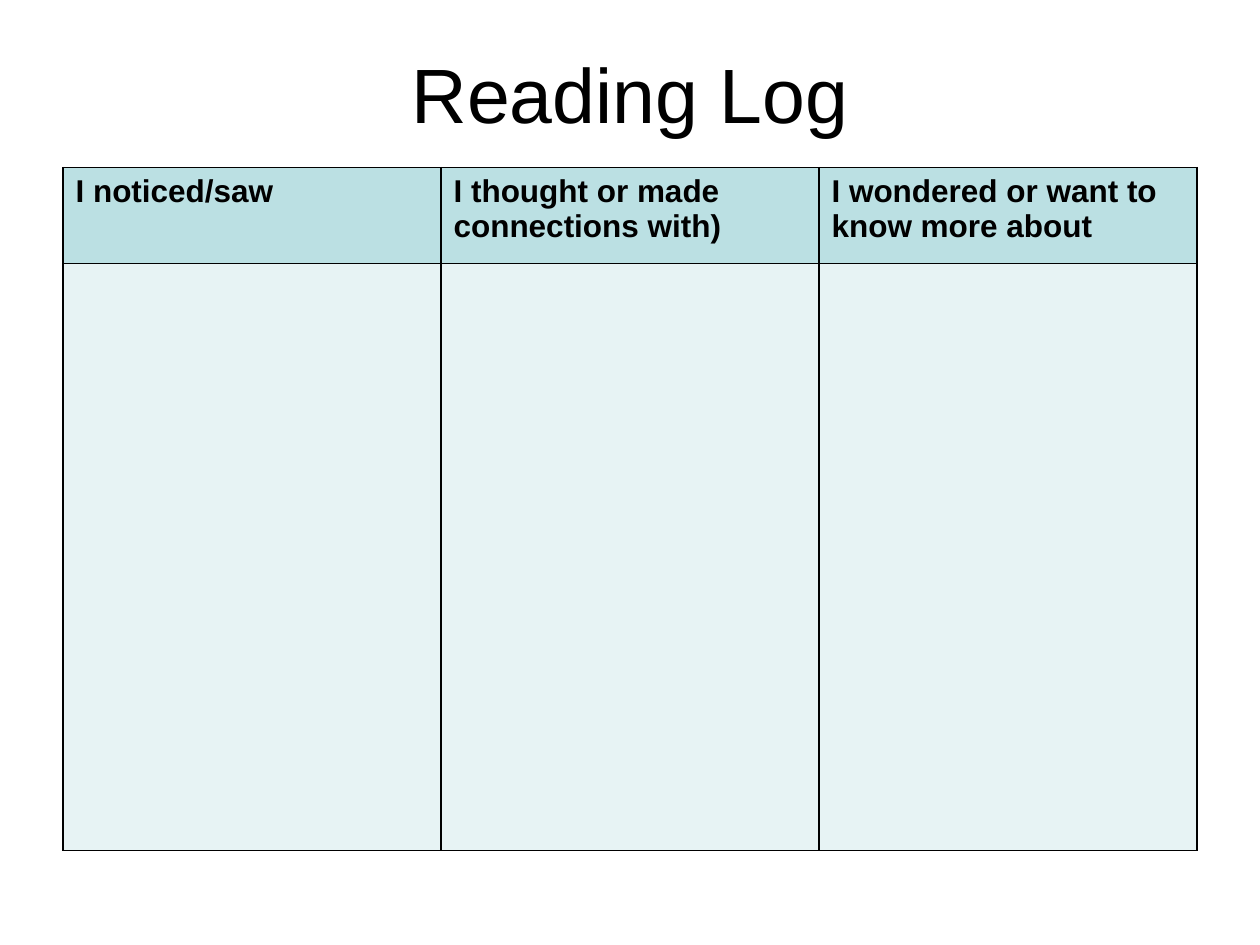
"""Build a one-slide reading log with a three-column table."""
from lxml.etree import SubElement as Sub
from pptx import Presentation as Deck
from pptx.dml.color import RGBColor as Color
from pptx.enum.text import MSO_ANCHOR as Anchor, PP_ALIGN as Align
from pptx.oxml.ns import qn
from pptx.util import Cm, Pt

TITLE = "Reading Log"
HEADS = ["I noticed/saw", "I thought or made connections with)",
         "I wondered or want to know more about"]
ROWS = [HEADS, [""] * len(HEADS)]
BLACK = Color(0x00, 0x00, 0x00)
TEAL = Color(0xBB, 0xE0, 0xE3)
PALE = Color(0xE7, 0xF3, 0xF4)
FILLS = [TEAL, PALE]
HIGH = [Cm(1.93), Cm(11.84)]
LEFT, WIDE = Cm(1.27), Cm(22.86)
BIG = {"name": "Arial", "size": Pt(44), "bold": False}
HEAD = {"name": "Arial", "size": Pt(18), "bold": True}


def style(font, form):
    for key, value in form.items():
        setattr(font, key, value)
    font.color.rgb = BLACK


def edge(cell):
    props = cell._tc.get_or_add_tcPr()
    for spot, side in enumerate(("lnL", "lnR", "lnT", "lnB")):
        line = Sub(props, qn(f"a:{side}"), w=str(Pt(1)))
        props.insert(spot, line)
        fill = Sub(line, qn("a:solidFill"))
        Sub(fill, qn("a:srgbClr"), val=str(BLACK))


def main():
    deck = Deck()
    deck.slide_width, deck.slide_height = Cm(25.4), Cm(19.05)
    slide = deck.slides.add_slide(deck.slide_layouts[5])

    title = slide.shapes.title
    place = {"left": LEFT, "top": Cm(0.76), "width": WIDE, "height": Cm(2.21)}
    for key, value in place.items():
        setattr(title, key, value)
    frame = title.text_frame
    frame.text = TITLE
    frame.vertical_anchor = Anchor.MIDDLE
    para = frame.paragraphs[0]
    para.alignment = Align.CENTER
    style(para.runs[0].font, BIG)

    grid = slide.shapes.add_table(len(ROWS), len(HEADS), LEFT, Cm(3.38),
                                  WIDE, sum(HIGH)).table
    for row, high, words, fill in zip(grid.rows, HIGH, ROWS, FILLS):
        row.height = high
        for cell, text in zip(row.cells, words):
            cell.text = text
            style(cell.text_frame.paragraphs[0].font, HEAD)
            for run in cell.text_frame.paragraphs[0].runs:
                style(run.font, HEAD)
            cell.fill.solid()
            cell.fill.fore_color.rgb = fill
            edge(cell)

    deck.save("out.pptx")


if __name__ == "__main__":
    main()
